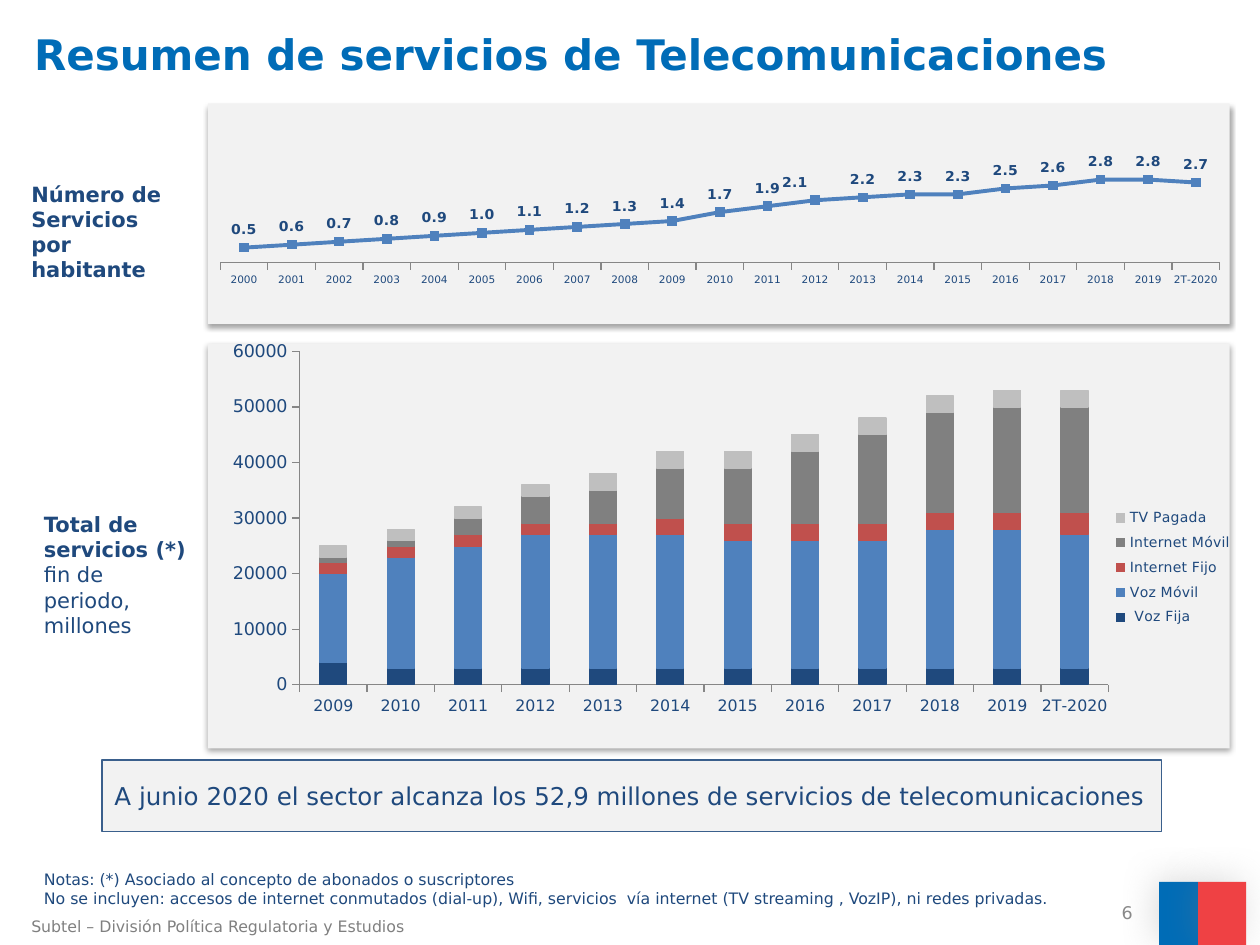
"""Builds the summary slide of telecommunications services."""
from dataclasses import dataclass

from lxml import etree
from pptx import Presentation
from pptx.chart.data import CategoryChartData
from pptx.dml.color import RGBColor
from pptx.enum.chart import (XL_CHART_TYPE, XL_LABEL_POSITION, XL_LEGEND_POSITION,
                             XL_MARKER_STYLE, XL_TICK_MARK)
from pptx.enum.shapes import MSO_SHAPE
from pptx.enum.text import MSO_ANCHOR, MSO_AUTO_SIZE, PP_ALIGN
from pptx.oxml.ns import qn
from pptx.util import Inches, Pt

RECTANGLE = MSO_SHAPE.RECTANGLE
LINE, STACKED = XL_CHART_TYPE.LINE_MARKERS, XL_CHART_TYPE.COLUMN_STACKED
ABOVE, LEGEND_RIGHT = XL_LABEL_POSITION.ABOVE, XL_LEGEND_POSITION.RIGHT
SQUARE, OUTSIDE, NO_TICK = XL_MARKER_STYLE.SQUARE, XL_TICK_MARK.OUTSIDE, XL_TICK_MARK.NONE
TOP, MIDDLE, NO_FIT = MSO_ANCHOR.TOP, MSO_ANCHOR.MIDDLE, MSO_AUTO_SIZE.NONE
LEFT, RIGHT, JUSTIFY = PP_ALIGN.LEFT, PP_ALIGN.RIGHT, PP_ALIGN.JUSTIFY


@dataclass(frozen=True)
class Theme:
    font: str = "DejaVu Sans"
    navy: str = "1F497D"
    blue: str = "006CB7"
    red: str = "EF4144"
    panel: str = "F2F2F2"
    border: str = "3A5F8C"
    trend: str = "4F81BD"
    brick: str = "C0504D"
    gray: str = "808080"
    silver: str = "BFBFBF"
    axis: str = "868686"
    page: str = "898989"
    title: float = 24
    banner: float = 14
    label: float = 12
    body: float = 10
    note: float = 9
    small: float = 8
    tiny: float = 6


@dataclass(frozen=True)
class Box:
    left: float
    top: float
    width: float
    height: float

    def emu(self) -> tuple:
        return tuple(Inches(v) for v in (self.left, self.top, self.width, self.height))


@dataclass(frozen=True)
class Shadow:
    color: str
    alpha: int
    blur: float
    distance: float
    angle: int


@dataclass(frozen=True)
class Service:
    name: str
    thousands: tuple
    color: str


THEME = Theme()
PANEL_SHADOW = Shadow("000000", 35, 3.1, 1.8, 90)
FLAG_SHADOW = Shadow(THEME.gray, 25, 20, 3, 215)
SERVICES_PER_PERSON = (0.5, 0.6, 0.7, 0.8, 0.9, 1, 1.1, 1.2, 1.3, 1.4, 1.7, 1.9, 2.1,
                       2.2, 2.3, 2.3, 2.5, 2.6, 2.8, 2.8, 2.7)
SERVICES = (
    Service(" Voz Fija", (4,) + (3,) * 11, THEME.navy),
    Service("Voz Móvil", (16, 20, 22, 24, 24, 24, 23, 23, 23, 25, 25, 24), THEME.trend),
    Service("Internet Fijo", (2,) * 5 + (3,) * 6 + (4,), THEME.brick),
    Service("Internet Móvil", (1, 1, 3, 5, 6, 9, 10, 13, 16, 18, 19, 19), THEME.gray),
    Service("TV Pagada", (2,) * 4 + (3,) * 8, THEME.silver),
)


def rgb(color: str) -> RGBColor:
    return RGBColor.from_string(color)


def style_font(font, size: float, color: str = THEME.navy, bold: bool = False) -> None:
    font.name, font.size, font.bold = THEME.font, Pt(size), bold
    font.color.rgb = rgb(color)


def write(shape, *lines: str, size: float, color: str = THEME.navy, bold_lines: int = 0,
          align=LEFT, anchor=TOP, space_after: float = 0) -> None:
    frame = shape.text_frame
    frame.word_wrap, frame.auto_size, frame.vertical_anchor = True, NO_FIT, anchor
    frame.text = "\n".join(lines)
    for index, paragraph in enumerate(frame.paragraphs):
        paragraph.alignment, paragraph.space_after = align, Pt(space_after)
        style_font(paragraph.runs[0].font, size, color, index < bold_lines)


def add_text(slide, box: Box, *lines: str, **style) -> None:
    write(slide.shapes.add_textbox(*box.emu()), *lines, **style)


def add_rectangle(slide, box: Box, fill: str, shadow: Shadow | None = None):
    shape = slide.shapes.add_shape(RECTANGLE, *box.emu())
    shape.fill.solid()
    shape.fill.fore_color.rgb = rgb(fill)
    shape.line.fill.background()
    shape.shadow.inherit = False
    if shadow:
        effects = shape._element.spPr.find(qn("a:effectLst"))
        outer = etree.SubElement(effects, qn("a:outerShdw"), blurRad=str(Pt(shadow.blur)),
                                 dist=str(Pt(shadow.distance)), dir=str(shadow.angle * 60000),
                                 algn="ctr", rotWithShape="0")
        tint = etree.SubElement(outer, qn("a:srgbClr"), val=shadow.color)
        etree.SubElement(tint, qn("a:alpha"), val=str(shadow.alpha * 1000))
    return shape


def set_layout(parent, index: int, **settings) -> None:
    for existing in parent.findall(qn("c:layout")):
        parent.remove(existing)
    layout = etree.Element(qn("c:layout"))
    manual = etree.SubElement(layout, qn("c:manualLayout"))
    for tag, value in settings.items():
        etree.SubElement(manual, qn(f"c:{tag}"), val=str(value))
    parent.insert(index, layout)


def add_chart(slide, box: Box, kind, categories: list, series: list, plot: Box, size: float,
              category_size: float):
    data = CategoryChartData()
    data.categories = categories
    for name, values in series:
        data.add_series(name, values)
    chart = slide.shapes.add_chart(kind, *box.emu(), data).chart
    style_font(chart.font, size)
    chart.has_title = chart.has_legend = False
    chart.plots[0].vary_by_categories = False
    for axis in (chart.category_axis, chart.value_axis):
        axis.has_major_gridlines = False
        axis.major_tick_mark, axis.minor_tick_mark = OUTSIDE, NO_TICK
        axis.format.line.color.rgb = rgb(THEME.axis)
    style_font(chart.category_axis.tick_labels.font, category_size)
    chart.value_axis.minimum_scale = 0
    set_layout(chart._chartSpace.chart.plotArea, 0, layoutTarget="inner", xMode="edge",
               yMode="edge", x=plot.left, y=plot.top, w=plot.width, h=plot.height)
    return chart


def add_trend_chart(slide) -> None:
    years = [str(year) for year in range(2000, 2020)] + ["2T-2020"]
    chart = add_chart(slide, Box(1.74, 1.22, 8.02, 1.37), LINE, years,
                      [("Servicios por habitante", SERVICES_PER_PERSON)],
                      Box(0.001, 0.095, 0.989, 0.527), THEME.small, THEME.tiny)
    chart.value_axis.maximum_scale = 3
    chart.value_axis.visible = False
    trend = chart.plots[0].series[0]
    trend.smooth = False
    trend.format.line.color.rgb = rgb(THEME.trend)
    trend.format.line.width = Pt(2.25)
    trend.marker.style, trend.marker.size = SQUARE, 5
    trend.marker.format.fill.solid()
    trend.marker.format.fill.fore_color.rgb = rgb(THEME.trend)
    trend.marker.format.line.color.rgb = rgb(THEME.trend)
    labels = trend.data_labels
    labels.show_value, labels.position = True, ABOVE
    labels.number_format, labels.number_format_is_linked = "#,##0.0", False
    style_font(labels.font, THEME.small, bold=True)
    shifted = trend.points[years.index("2012")].data_label
    style_font(shifted.font, THEME.small, bold=True)
    shifted.position = ABOVE
    element = labels._element.find(qn("c:dLbl"))
    set_layout(element, 1, x=-0.02, y=0)
    element.insert(2, etree.Element(qn("c:numFmt"), formatCode="#,##0.0", sourceLinked="0"))


def add_services_chart(slide) -> None:
    years = [str(year) for year in range(2009, 2020)] + ["2T-2020"]
    series = [(s.name, [value * 1000 for value in s.thousands]) for s in SERVICES]
    chart = add_chart(slide, Box(1.54, 2.58, 8.38, 3.5), STACKED, years, series,
                      Box(0.1, 0.06, 0.766, 0.756), THEME.body, THEME.note)
    chart.value_axis.maximum_scale, chart.value_axis.major_unit = 60000, 10000
    bars = chart.plots[0]
    bars.gap_width, bars.overlap = 150, 100
    for bar, service in zip(bars.series, SERVICES):
        bar.format.fill.solid()
        bar.format.fill.fore_color.rgb = rgb(service.color)
        bar.format.line.color.rgb = rgb(service.color)
        bar.format.line.width = Pt(0.75)
    chart.has_legend = True
    chart.legend.position, chart.legend.include_in_layout = LEGEND_RIGHT, False
    style_font(chart.legend.font, THEME.small)
    set_layout(chart.legend._element, 1, xMode="edge", yMode="edge",
               x=0.865, y=0.4, w=0.125, h=0.3)


def main() -> None:
    deck = Presentation()
    deck.slide_width, deck.slide_height = Inches(10), Inches(7.5)
    slide = deck.slides.add_slide(deck.slide_layouts[5])
    title = slide.shapes.title
    title.left, title.top, title.width, title.height = Box(0.17, 0.17, 9.29, 0.51).emu()
    write(title, "Resumen de servicios de Telecomunicaciones", size=THEME.title,
          color=THEME.blue, bold_lines=1, anchor=MIDDLE)
    add_rectangle(slide, Box(9.2, 7, 0.31, 0.5), THEME.blue, FLAG_SHADOW)
    add_rectangle(slide, Box(9.51, 7, 0.38, 0.5), THEME.red, FLAG_SHADOW)
    for top, height in ((2.73, 3.21), (0.82, 1.75)):
        add_rectangle(slide, Box(1.65, top, 8.11, height), THEME.panel, PANEL_SHADOW)
    add_text(slide, Box(0.25, 4.01, 1.4, 1.11), "Total de servicios (*)", "fin de periodo,",
             "millones", size=THEME.label, bold_lines=1)
    add_text(slide, Box(0.25, 6.85, 8.56, 0.61),
             "Notas: (*) Asociado al concepto de abonados o suscriptores",
             "No se incluyen: accesos de internet conmutados (dial-up), Wifi, servicios  vía "
             "internet (TV streaming , VozIP), ni redes privadas.", size=THEME.note)
    add_trend_chart(slide)
    add_text(slide, Box(0.15, 1.39, 1.39, 0.91), "Número de Servicios", "por habitante",
             size=THEME.label, bold_lines=2)
    add_text(slide, Box(0.15, 7.23, 5.33, 0.25),
             "Subtel – División Política Regulatoria y Estudios", size=THEME.note,
             color=THEME.gray)
    add_services_chart(slide)
    banner = add_rectangle(slide, Box(0.81, 6.03, 8.41, 0.57), THEME.panel)
    banner.line.color.rgb, banner.line.width = rgb(THEME.border), Pt(1)
    write(banner, "A junio 2020 el sector alcanza los 52,9 millones de servicios de "
          "telecomunicaciones", size=THEME.banner, align=JUSTIFY, anchor=MIDDLE, space_after=4)
    add_text(slide, Box(6.76, 7.14, 2.33, 0.21), "6", size=THEME.body, color=THEME.page,
             align=RIGHT, anchor=MIDDLE)
    deck.save("out.pptx")


if __name__ == "__main__":
    main()
